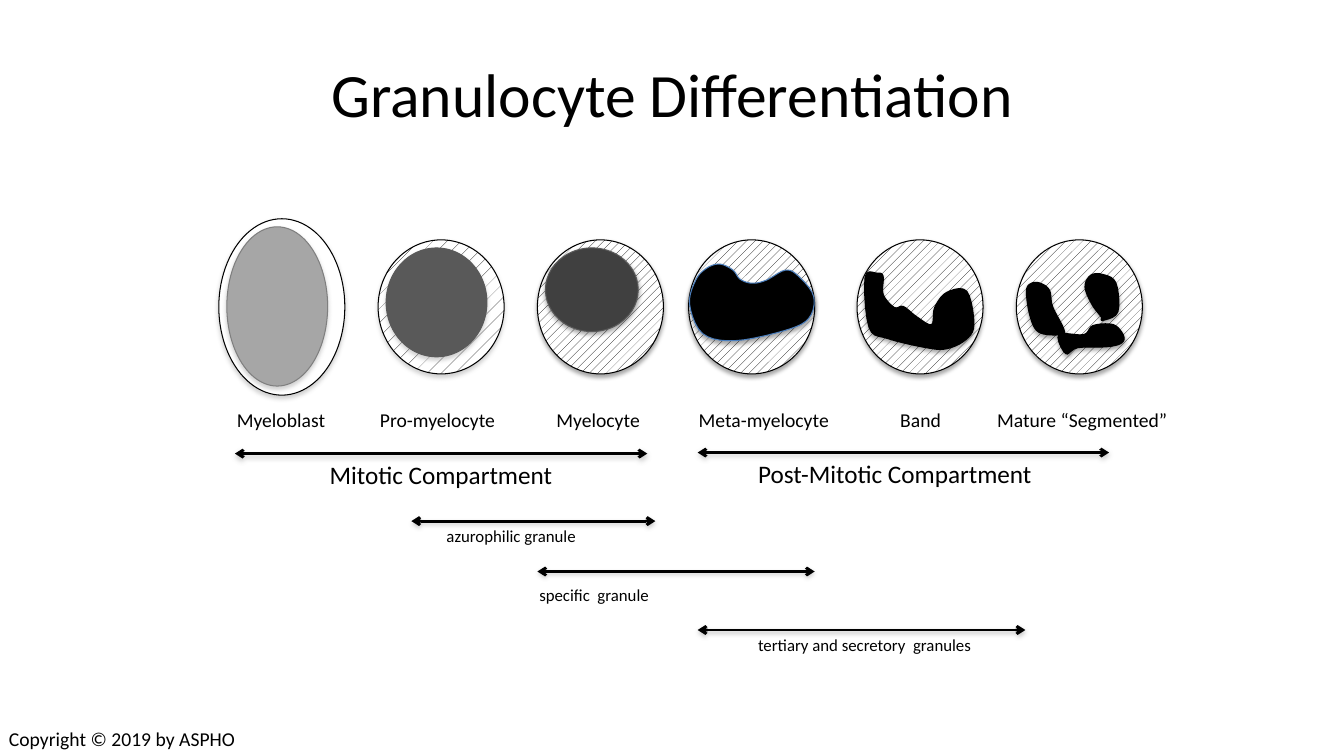
from lxml.etree import SubElement
from pptx import Presentation
from pptx.dml.color import RGBColor
from pptx.enum.dml import MSO_PATTERN
from pptx.enum.shapes import MSO_CONNECTOR, MSO_SHAPE
from pptx.enum.text import MSO_ANCHOR, MSO_AUTO_SIZE, PP_ALIGN
from pptx.oxml.ns import qn
from pptx.util import Inches, Pt

COLORS = {"black": "000000", "white": "FFFFFF", "shade": "808080",
          "blast": "A6A6A6", "blast_edge": "7F7F7F", "pro": "595959",
          "myelo": "404040", "blue": "4B7EBC"}
SPARSE, DENSE = MSO_PATTERN.PERCENT_5, MSO_PATTERN.PERCENT_20
CELL_TOP, CELL_WIDTH, CELL_HEIGHT = 2.38, 1.25, 1.33
NUCLEUS_INSET = 0.08
CURVE_STEPS = 5

KIDNEY = [(0.46, 1), (0.14, 0.93), (0.01, 0.64), (0.07, 0.4), (0.18, 0.28),
          (0.31, 0.24), (0.44, 0.3), (0.51, 0.39), (0.63, 0.43), (0.77, 0.4),
          (0.96, 0.3), (1.09, 0.36), (1.24, 0.56), (1.19, 0.78), (0.95, 0.9)]
HORSESHOE = [(0.08, 0.37), (0.2, 0.33), (0.26, 0.36), (0.26, 0.54),
             (0.37, 0.67), (0.46, 0.66), (0.59, 0.76), (0.74, 0.84),
             (0.77, 0.67), (0.89, 0.52), (1.09, 0.51), (1.16, 0.84),
             (1.08, 0.99), (0.89, 1.08), (0.69, 1.07), (0.31, 0.98),
             (0.12, 0.87)]
LEFT_LOBE = [(0.1, 0.51), (0.15, 0.43), (0.24, 0.43), (0.33, 0.5),
             (0.36, 0.66), (0.47, 0.88), (0.45, 0.94), (0.23, 0.92),
             (0.14, 0.77)]
LOWER_LOBE = [(0.42, 0.94), (0.67, 0.94), (0.76, 0.85), (0.96, 0.84),
              (1.06, 0.94), (1.05, 1.02), (0.91, 1.06), (0.61, 1.07),
              (0.49, 1.13)]
RIGHT_LOBE = [(0.85, 0.76), (0.76, 0.64), (0.69, 0.47), (0.74, 0.36),
              (0.85, 0.35), (0.98, 0.43), (1, 0.71), (0.86, 0.79)]

ROUND_CELLS = [
    ("Myeloblast", 2.17, 2.25, 1.09, 2.17, 1.75, "white", (1, 1.58), "blast", "blast_edge", "shade"),
    ("Pro-myelocyte", 3.75, 3.67, 1.37, CELL_TOP, CELL_HEIGHT, SPARSE, (1, 1.08), "pro", "pro", "shade"),
    ("Myelocyte", 5.33, 5.42, 1.04, CELL_TOP, CELL_HEIGHT, DENSE, (0.92, 0.83), "myelo", "pro", "black"),
]
LOBED_CELLS = [
    ("Meta-myelocyte", 6.83, 6.83, 1.52, [(KIDNEY, "blue", 0.75)]),
    ("Band", 8.5, 8.83, 0.61, [(HORSESHOE, "black", 0.75)]),
    ("Mature “Segmented”", 10.08, 9.79, 1.91,
     [(LEFT_LOBE, "black", 0.75), (LOWER_LOBE, "black", 0.75), (RIGHT_LOBE, "black", 2)]),
]
SPANS = [
    ("Mitotic Compartment", (2.33, 6.42, 4.5), (3.17, 4.51, 2.5, 0.4), 18, True),
    ("Post-Mitotic Compartment", (6.92, 11, 4.49), (7.42, 4.5, 3.08, 0.4), 18, True),
    ("azurophilic granule", (4.08, 6.5, 5.17), (4.33, 5.17, 1.51, 0.3), 12, False),
    ("specific  granule", (5.33, 8.08, 5.67), (5.25, 5.75, 1.31, 0.3), 12, False),
    ("tertiary and secretory  granules", (6.92, 10.17, 6.25), (7.42, 6.25, 2.38, 0.3), 12, False),
]


def rgb(name):
    return RGBColor.from_string(COLORS[name])


def add_shadow(shape, color, alpha=35, dist=1.8):
    effects = SubElement(shape._element.spPr, qn("a:effectLst"))
    shadow = SubElement(effects, qn("a:outerShdw"), blurRad=str(Pt(3.1)),
                        dist=str(Pt(dist)), dir="5400000", rotWithShape="0")
    clr = SubElement(shadow, qn("a:srgbClr"), val=COLORS[color])
    SubElement(clr, qn("a:alpha"), val=str(alpha * 1000))


def style(shape, fill, line, shadow, width=0.75):
    if fill in COLORS:
        shape.fill.solid()
        shape.fill.fore_color.rgb = rgb(fill)
    else:
        shape.fill.patterned()
        shape.fill.pattern = fill
        shape.fill.fore_color.rgb = rgb("black")
        shape.fill.back_color.rgb = rgb("white")
    shape.line.color.rgb = rgb(line)
    shape.line.width = Pt(width)
    add_shadow(shape, shadow)


def spline(a, b, c, d, t):
    return (2 * b + (c - a) * t + (2 * a - 5 * b + 4 * c - d) * t ** 2
            + (3 * b - a - 3 * c + d) * t ** 3) / 2


def smooth_outline(anchors):
    count = len(anchors)
    outline = []
    for i in range(count):
        neighbours = [anchors[(i + k) % count] for k in (-1, 0, 1, 2)]
        xs, ys = zip(*neighbours)
        for step in range(CURVE_STEPS):
            t = step / CURVE_STEPS
            outline.append((spline(*xs, t), spline(*ys, t)))
    return outline


def add_oval(shapes, box, fill, line, shadow):
    oval = shapes.add_shape(MSO_SHAPE.OVAL, *map(Inches, box))
    style(oval, fill, line, shadow)


def add_lobe(shapes, left, anchors, line, width):
    start, *rest = [(Inches(left + x), Inches(CELL_TOP + y))
                    for x, y in smooth_outline(anchors)]
    builder = shapes.build_freeform(*start)
    builder.add_line_segments(rest, close=True)
    style(builder.convert_to_shape(), "black", line, "black", width)


def add_cell(s, left, top, height, fill, shadow):
    shapes = s.shapes.add_group_shape().shapes
    add_oval(shapes, (left, top, CELL_WIDTH, height), fill, "black", shadow)
    return shapes


def add_arrow(s, x1, x2, y):
    arrow = s.shapes.add_connector(MSO_CONNECTOR.STRAIGHT, Inches(x1),
                                   Inches(y), Inches(x2), Inches(y))
    arrow.line.color.rgb = rgb("black")
    arrow.line.width = Pt(2)
    ln = arrow.line._get_or_add_ln()
    for end in ("a:headEnd", "a:tailEnd"):
        SubElement(ln, qn(end), type="arrow")
    add_shadow(arrow, "shade", 38, 1.6)


def add_text(s, text, box, size, wrap=False):
    tb = s.shapes.add_textbox(*map(Inches, box))
    tf = tb.text_frame
    tf.word_wrap = wrap
    tf.auto_size = MSO_AUTO_SIZE.SHAPE_TO_FIT_TEXT
    p = tf.paragraphs[0]
    p.text = text
    p.font.name = "Calibri"
    p.font.size = Pt(size)
    p.font.color.rgb = rgb("black")
    return tf


def add_title(s, text):
    tf = add_text(s, text, (0.67, 0.3, 12, 1.25), 44, True)
    tf.auto_size = MSO_AUTO_SIZE.NONE
    tf.vertical_anchor = MSO_ANCHOR.MIDDLE
    tf.paragraphs[0].alignment = PP_ALIGN.CENTER


def add_cell_label(s, text, left, width):
    add_text(s, text, (left, 4, width, 0.34), 14)


def main():
    prs = Presentation()
    prs.slide_width, prs.slide_height = Inches(13.33), Inches(7.5)
    s = prs.slides.add_slide(prs.slide_layouts[6])
    add_title(s, "Granulocyte Differentiation")
    for (name, left, label_left, label_width, top, height,
         fill, nucleus_size, nucleus, edge, shadow) in ROUND_CELLS:
        cell = add_cell(s, left, top, height, fill, shadow)
        corner = (left + NUCLEUS_INSET, top + NUCLEUS_INSET)
        add_oval(cell, corner + nucleus_size, nucleus, edge, shadow)
        add_cell_label(s, name, label_left, label_width)
    for name, left, label_left, label_width, lobes in LOBED_CELLS:
        cell = add_cell(s, left, CELL_TOP, CELL_HEIGHT, DENSE, "black")
        for anchors, line, width in lobes:
            add_lobe(cell, left, anchors, line, width)
        add_cell_label(s, name, label_left, label_width)
    for caption, arrow, box, size, wrap in SPANS:
        add_arrow(s, *arrow)
        add_text(s, caption, box, size, wrap)
    add_text(s, "Copyright © 2019 by ASPHO", (-0.01, 7.16, 2.48, 0.34), 14, True)
    prs.save("out.pptx")


if __name__ == "__main__":
    main()
